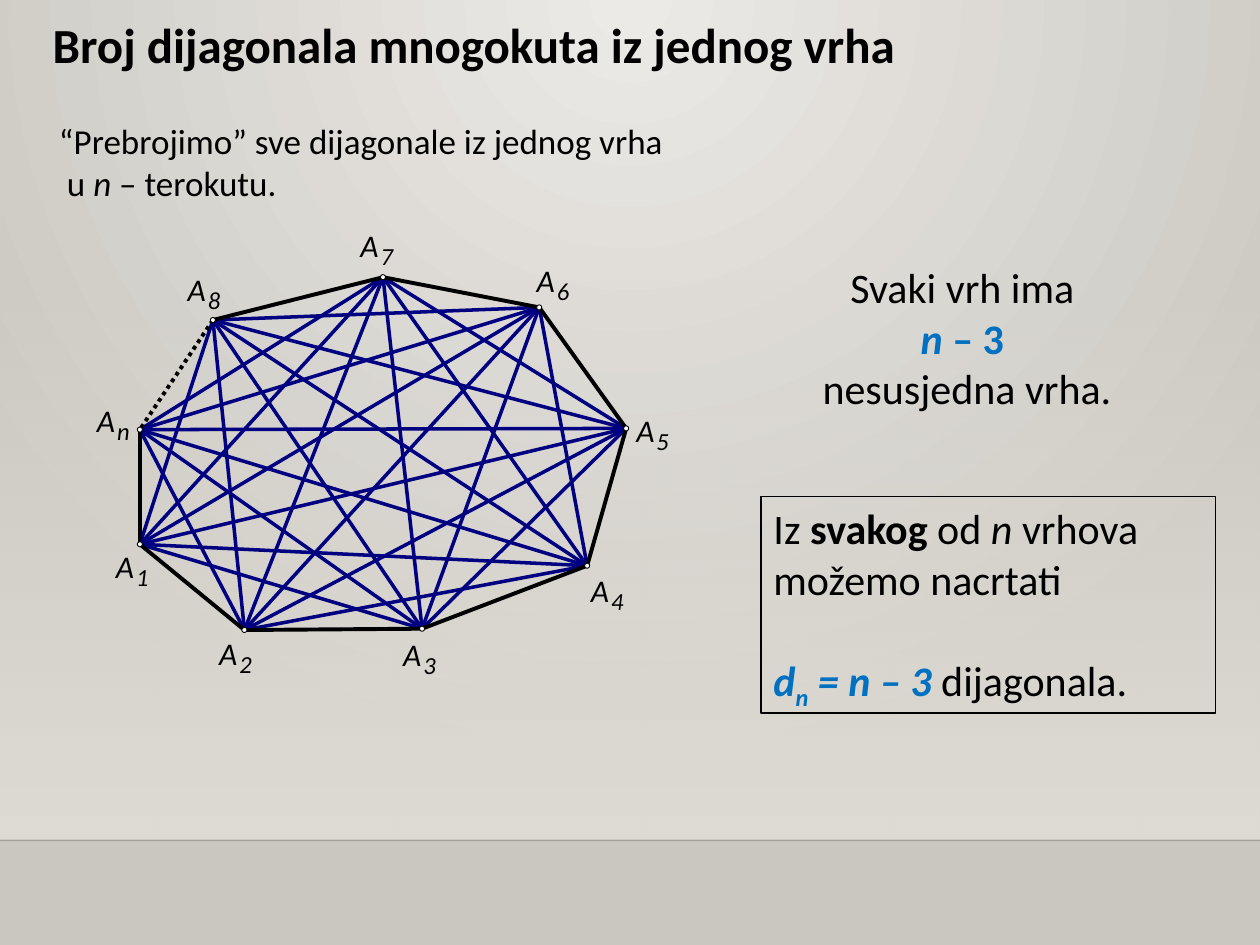
from itertools import combinations

from lxml import etree
from pptx import Presentation
from pptx import util as u
from pptx.dml.color import RGBColor
from pptx.enum import dml, shapes, text
from pptx.oxml.ns import qn

IN = u.Inches
THEME = {
    "font": "Calibri",
    "ink": "000000", "blue": "0070C0", "navy": "000080", "white": "FFFFFF",
    "glow": "ECEAE7", "edge": "CAC7C1", "wall": "DFDBD5", "rule": "000001",
    "title": 28, "body": 24, "lead": 20, "name": 18, "index": 14,
}


def write(box, size, paras, wrap=True, inset=None, **para):
    """Fill a shape with paragraphs, each a list of (text, format) runs."""
    frame = box.text_frame
    frame.word_wrap = wrap
    frame.vertical_anchor = text.MSO_ANCHOR.TOP
    if inset is not None:
        for side in ("left", "top", "right", "bottom"):
            setattr(frame, "margin_" + side, IN(inset))
    for i, runs in enumerate(paras):
        p = frame.add_paragraph() if i else frame.paragraphs[0]
        for key, val in para.items():
            setattr(p, key, val)
        for words, style in runs:
            run = p.add_run()
            run.text = words
            style = dict(style)
            tint = style.pop("tint", "ink")
            base = style.pop("base", None)
            look = {"name": THEME["font"], "size": u.Pt(THEME[size]), **style}
            for key, val in look.items():
                setattr(run.font, key, val)
            run.font.color.rgb = RGBColor.from_string(THEME[tint])
            if base:
                run.font._element.set("baseline", str(base))
    return frame


def draw(start, end, tint, width, dash=None):
    """Draw a straight line between two points given in inches."""
    line = slide.shapes.add_connector(
        shapes.MSO_CONNECTOR.STRAIGHT, *[IN(v) for v in (*start, *end)])
    line.line.color.rgb = RGBColor.from_string(THEME[tint])
    line.line.width = u.Pt(width)
    if dash:
        line.line.dash_style = dash
    etree.SubElement(line._element.spPr, qn("a:effectLst"))
    return line


deck = Presentation()
deck.slide_width, deck.slide_height = IN(10), IN(7.5)
slide = deck.slides.add_slide(deck.slide_layouts[6])

# Backdrop: a round glow from the top, a wall that fades in, and a floor line
back = slide.background.fill
wall = slide.shapes.add_shape(
    shapes.MSO_SHAPE.RECTANGLE, 0, IN(2.2), IN(10), IN(4.46))
wall.shadow.inherit = False
wall.line.fill.background()
for fill, tints in ((back, ("glow", "edge")), (wall.fill, ("wall", "wall"))):
    fill.gradient()
    for stop, tint in zip(fill.gradient_stops, tints):
        stop.color.rgb = RGBColor.from_string(THEME[tint])
wall.fill.gradient_angle = 270
clear = wall._element.spPr.find(".//" + qn("a:srgbClr"))
etree.SubElement(clear, qn("a:alpha"), val="0")

grad = slide._element.find(".//" + qn("a:gradFill"))
grad.remove(grad.find(qn("a:lin")))
glow = etree.SubElement(grad, qn("a:path"))
glow.set("path", "circle")
etree.SubElement(glow, qn("a:fillToRect"), l="43000", t="0", r="43000", b="100000")

floor = draw((0, 6.67), (10, 6.67), "rule", 1)
shade = floor._element.spPr.find(".//" + qn("a:srgbClr"))
etree.SubElement(shade, qn("a:alpha"), val="20000")

# Polygon: index, vertex, and top left of its label, in order round the edge
corners = [
    ("1", (1.11, 4.32), (0.92, 4.34)),
    ("2", (1.94, 5.00), (1.74, 5.03)),
    ("3", (3.35, 4.99), (3.20, 5.04)),
    ("4", (4.66, 4.49), (4.69, 4.53)),
    ("5", (4.97, 3.40), (5.05, 3.26)),
    ("6", (4.28, 2.44), (4.26, 2.07)),
    ("7", (3.04, 2.20), (2.86, 1.79)),
    ("8", (1.69, 2.54), (1.49, 2.14)),
    ("n", (1.11, 3.41), (0.77, 3.18)),
]
points = [point for _, point, _ in corners]
count = len(points)
for i, j in combinations(range(count), 2):
    if j - i not in (1, count - 1):
        draw(points[i], points[j], "navy", 0)
for i, (mark, point, _) in enumerate(corners):
    dash = dml.MSO_LINE.ROUND_DOT if mark == "8" else None
    draw(point, points[(i + 1) % count], "ink", 2.25, dash)

for mark, (x, y), (left, top) in corners:
    dot = slide.shapes.add_shape(
        shapes.MSO_SHAPE.OVAL, IN(x - 0.02), IN(y - 0.02), IN(0.04), IN(0.04))
    dot.shadow.inherit = False
    dot.fill.solid()
    dot.fill.fore_color.rgb = RGBColor.from_string(THEME["white"])
    dot.line.color.rgb = RGBColor.from_string(THEME["ink"])
    dot.line.width = u.Pt(0.5)
    for words, size, dx, dy, w, h in (
            ("A", "name", 0, 0, 0.17, 0.3),
            (mark, "index", 0.16, 0.12, 0.11, 0.24)):
        label = slide.shapes.add_textbox(IN(left + dx), IN(top + dy), IN(w), IN(h))
        write(label, size, [[(words, {"italic": True})]], wrap=False, inset=0)

# Wording
bold, slant = {"bold": True}, {"italic": True}
key = {"bold": True, "tint": "blue"}
term = {**key, "italic": True}

fact = slide.shapes.add_textbox(IN(6.17), IN(2.03), IN(3.01), IN(1.31))
write(fact, "body", [
    [("Svaki vrh ima ", {})],
    [("n", term), (" – 3 ", key)],
    [("nesusjedna vrha.", {})],
], alignment=text.PP_ALIGN.CENTER)

lead = slide.shapes.add_textbox(IN(0.37), IN(0.9), IN(5.67), IN(0.77))
write(lead, "lead", [
    [("“Prebrojimo” sve dijagonale iz jednog vrha", {})],
    [(" u ", {}), ("n ", slant), ("– terokutu.", {})],
])

rule = slide.shapes.add_shape(
    shapes.MSO_SHAPE.RECTANGLE, IN(6.04), IN(3.94), IN(3.61), IN(1.72))
rule.shadow.inherit = False
rule.fill.background()
rule.line.color.rgb = RGBColor.from_string(THEME["ink"])
rule.line.width = 0
frame = write(rule, "body", [
    [("Iz ", {}), ("svakog", bold), (" od ", {}), ("n ", slant),
     ("vrhova možemo nacrtati", {})],
    [("d", term), ("n", {**term, "base": -25000}), (" = n – 3", term),
     (" dijagonala.", {})],
], alignment=text.PP_ALIGN.LEFT)
frame.paragraphs[1].space_before = u.Pt(29)

title = slide.shapes.add_textbox(IN(0.32), IN(0.07), IN(8.02), IN(0.57))
write(title, "title", [[("Broj dijagonala mnogokuta iz jednog vrha", bold)]], wrap=False)

deck.save("out.pptx")
